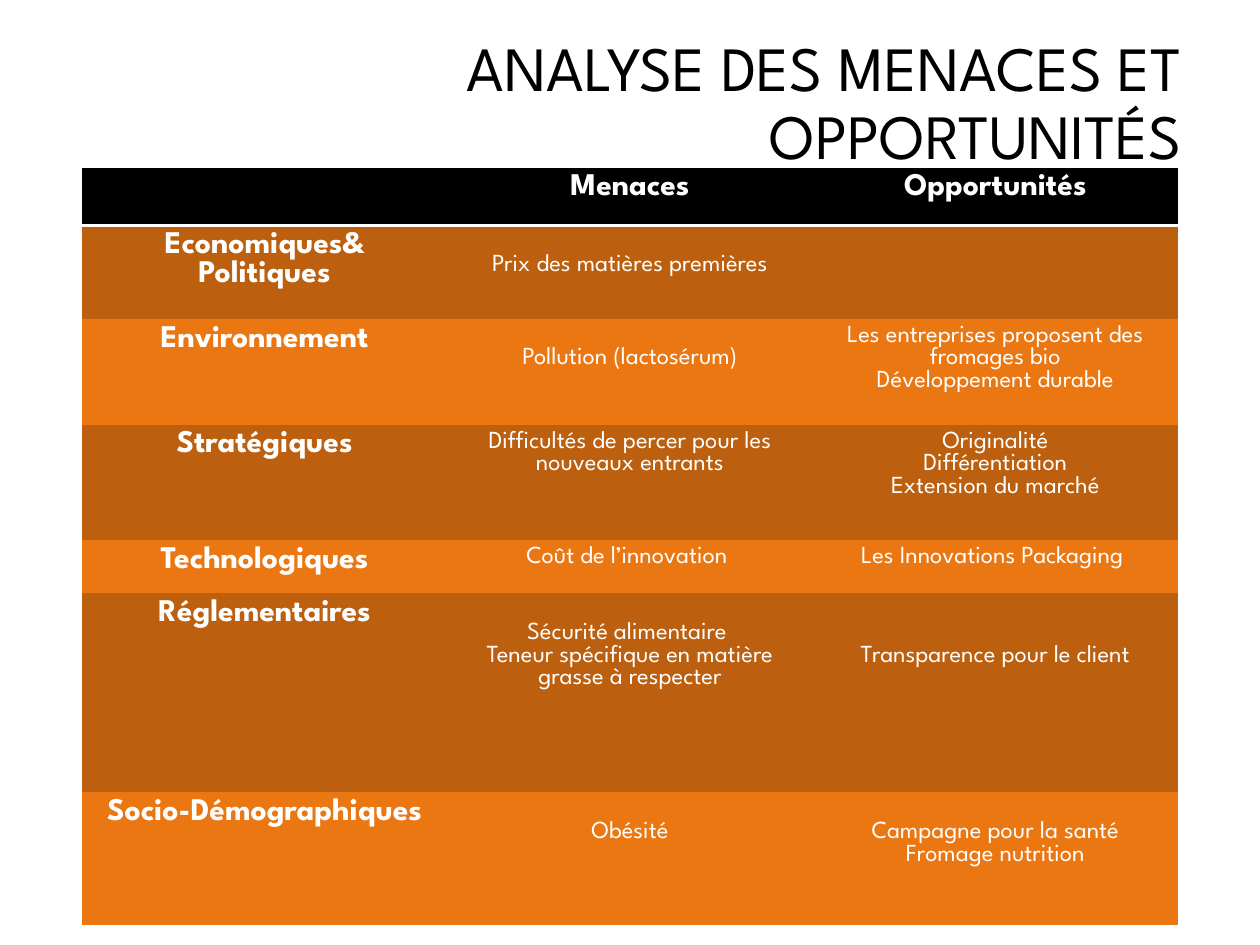
import pptx
import pptx.util
import pptx.dml.color
import pptx.enum.text
import lxml.etree
from pptx.util import Inches, Pt
from pptx.enum.text import MSO_ANCHOR, PP_ALIGN

FONT = "League Spartan"
BLANK_LINE = 0.18


def color(value):
    return pptx.dml.color.RGBColor.from_string(value)


def style(paragraph, size, bold, value, align):
    paragraph.alignment = align
    paragraph.font.name = FONT
    paragraph.font.size = Pt(size)
    paragraph.font.bold = bold
    paragraph.font.color.rgb = color(value)


deck = pptx.Presentation()
deck.slide_width, deck.slide_height = Inches(10), Inches(7.5)
slide = deck.slides.add_slide(deck.slide_layouts[6])

title = slide.shapes.add_textbox(Inches(1.23), Inches(0.13), Inches(8.25), Inches(1.41)).text_frame
title.word_wrap = True
title.vertical_anchor = MSO_ANCHOR.MIDDLE
title.text = "ANALYSE DES MENACES ET OPPORTUNITÉS"
title.paragraphs[0].line_spacing = 0.9
style(title.paragraphs[0], 36, False, "000000", PP_ALIGN.RIGHT)

factors = [
    ("", "Menaces", "Opportunités"),
    ("Economiques&\nPolitiques", "Prix des matières premières", ""),
    ("Environnement", "Pollution (lactosérum)",
     "Les entreprises proposent des fromages bio\nDéveloppement durable"),
    ("Stratégiques", "Difficultés de percer pour les nouveaux entrants",
     "Originalité\nDifférentiation\nExtension du marché"),
    ("Technologiques", "Coût de l’innovation ", "Les Innovations Packaging "),
    ("Réglementaires",
     "Sécurité alimentaire \nTeneur spécifique en matière grasse à respecter",
     "Transparence pour le client"),
    ("Socio-Démographiques", "Obésité", "Campagne pour la santé\nFromage nutrition"),
]
row_heights = [0.46, 0.74, 0.84, 0.92, 0.42, 1.58, 1.05]
lines_above = {(1, 1): 1, (2, 1): 1, (5, 1): 1, (5, 2): 2, (6, 1): 1, (6, 2): 1}

analysis = slide.shapes.add_table(
    len(factors), 3, Inches(0.65), Inches(1.33), Inches(8.7), Inches(sum(row_heights))
).table
analysis._tbl.tblPr.find(pptx.oxml.ns.qn("a:tableStyleId")).text = "{2D5ABB26-0587-4C30-8999-92F81FD0307C}"
for column in analysis.columns:
    column.width = Inches(2.9)

for r, (texts, height) in enumerate(zip(factors, row_heights)):
    analysis.rows[r].height = Inches(height)
    band = "000000" if r == 0 else ("BC5F0E" if r % 2 else "EB7712")
    for c, text in enumerate(texts):
        cell = analysis.cell(r, c)
        cell.fill.solid()
        cell.fill.fore_color.rgb = color(band)
        cell.margin_top = Inches(0.05 + BLANK_LINE * lines_above.get((r, c), 0))
        cell.text = text
        heading = r == 0 or c == 0
        for paragraph in cell.text_frame.paragraphs:
            style(paragraph, 18 if heading else 14, heading, "FFFFFF", PP_ALIGN.CENTER)
        if r == 0:
            rule = pptx.oxml.parse_xml(
                '<a:lnB xmlns:a="http://schemas.openxmlformats.org/drawingml/2006/main" w="25400">'
                '<a:solidFill><a:srgbClr val="FFFFFF"/></a:solidFill></a:lnB>'
            )
            cell._tc.tcPr.insert(0, rule)

deck.save("out.pptx")
